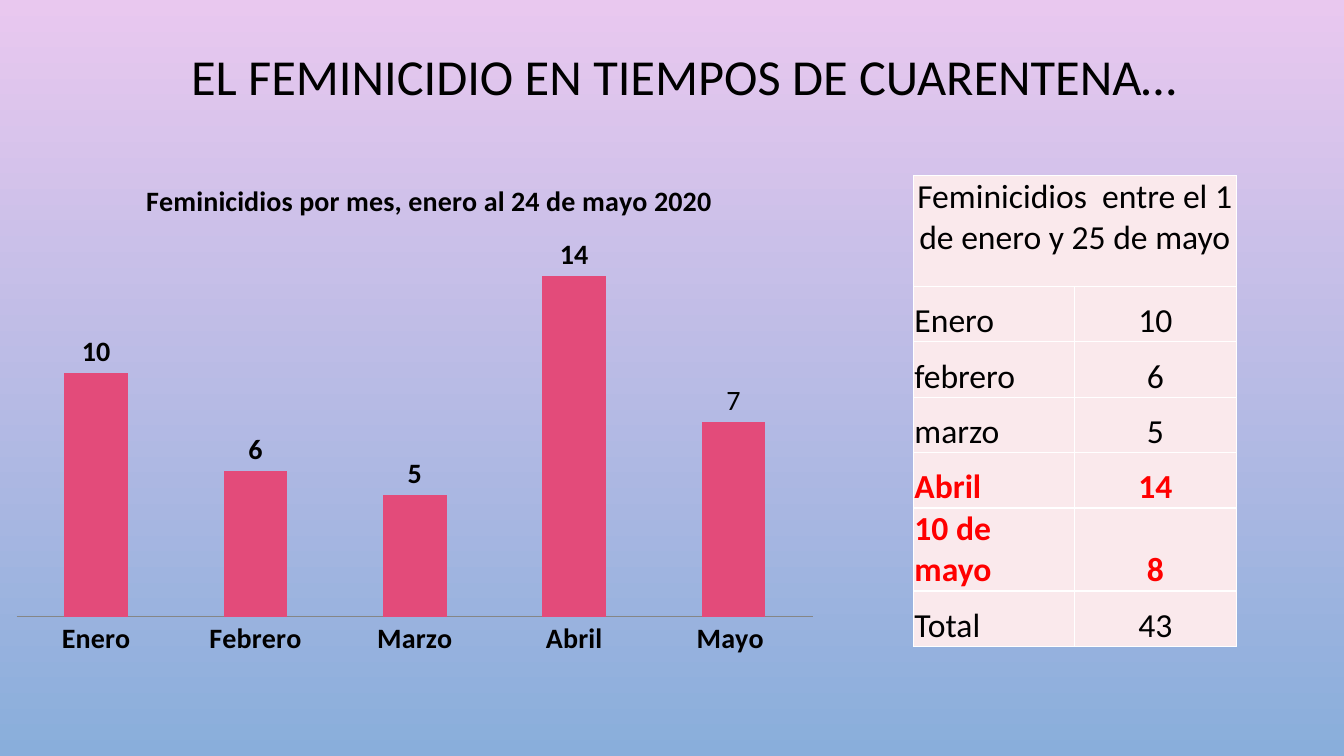
import pptx
import pptx.util
import pptx.chart.data
import pptx.dml.color
import pptx.enum.chart
import pptx.enum.text
import pptx.oxml
import pptx.oxml.ns
from dataclasses import dataclass

Inches, Pt = pptx.util.Inches, pptx.util.Pt
RGB = pptx.dml.color.RGBColor.from_string
qn = pptx.oxml.ns.qn
ALIGN = pptx.enum.text.PP_ALIGN
ANCHOR = pptx.enum.text.MSO_ANCHOR


@dataclass(frozen=True)
class Theme:
    font: str = "Calibri"
    text: str = "000000"
    alert: str = "FF0000"
    bar: str = "E34B7A"
    axis: str = "868686"
    cell: str = "FAE9EC"
    border: str = "FFFFFF"
    bg: tuple = ("E9C8EF", "89AEDB")
    title_size: int = 36
    chart_size: int = 20
    table_size: int = 24


T = Theme()

MONTHS = ["Enero", "Febrero", "Marzo", "Abril", "Mayo "]
COUNTS = [10, 6, 5, 14, 8]
TABLE_HEAD = "Feminicidios  entre el 1 de enero y 25 de mayo"
# label, value, highlighted
TABLE_ROWS = [
    ("Enero", "10", False),
    ("febrero", "6", False),
    ("marzo", "5", False),
    ("Abril", "14", True),
    ("10 de mayo", "8", True),
    ("Total", "43", False),
]


def set_attrs(obj, values):
    for name, value in values.items():
        setattr(obj, name, value)


def style_font(font, size, bold=False, color=T.text):
    set_attrs(font, {"name": T.font, "size": Pt(size), "bold": bold})
    font.color.rgb = RGB(color)


def set_layout(parent, index, **fractions):
    """Place a chart part by fractions of the chart's box."""
    old = parent.find(qn("c:layout"))
    if old is not None:
        parent.remove(old)
    target = '<c:layoutTarget val="inner"/>' if "w" in fractions else ""
    modes = "".join(f'<c:{k}Mode val="edge"/>' for k in ("x", "y"))
    values = "".join(f'<c:{k} val="{v}"/>' for k, v in fractions.items())
    parent.insert(index, pptx.oxml.parse_xml(
        f'<c:layout {pptx.oxml.ns.nsdecls("c")}><c:manualLayout>'
        f"{target}{modes}{values}</c:manualLayout></c:layout>"))


def add_background(s):
    fill = s.background.fill
    fill.gradient()
    fill.gradient_angle = 270
    for stop, color, pos in zip(fill.gradient_stops, T.bg, (0, 1)):
        stop.color.rgb = RGB(color)
        stop.position = pos


def add_title(s, x, y, w, h):
    sp = s.shapes.title
    set_attrs(sp, {"left": Inches(x), "top": Inches(y),
                   "width": Inches(w), "height": Inches(h)})
    tf = sp.text_frame
    tf.vertical_anchor = ANCHOR.MIDDLE
    p = tf.paragraphs[0]
    set_attrs(p, {"alignment": ALIGN.CENTER, "line_spacing": 0.9})
    r = p.add_run()
    r.text = "EL FEMINICIDIO EN TIEMPOS DE CUARENTENA…"
    style_font(r.font, T.title_size)


def add_month_chart(s, x, y, w, h):
    data = pptx.chart.data.CategoryChartData()
    data.categories = MONTHS
    data.add_series("Feminicidios", COUNTS)
    chart = s.shapes.add_chart(
        pptx.enum.chart.XL_CHART_TYPE.COLUMN_CLUSTERED,
        Inches(x), Inches(y), Inches(w), Inches(h), data).chart
    style_font(chart.font, T.chart_size)
    chart.has_legend = False

    # Title
    chart.has_title = True
    r = chart.chart_title.text_frame.paragraphs[0].add_run()
    r.text = "Feminicidios por mes, enero al 24 de mayo 2020"
    style_font(r.font, T.chart_size, bold=True)
    chart.chart_title.include_in_layout = False
    plot_area = chart._chartSpace.chart.plotArea
    set_layout(chart._chartSpace.chart.find(qn("c:title")), 1, x=0.17, y=0.04)
    set_layout(plot_area, 0, x=0.02, y=0.14, w=0.96, h=0.76)

    # Axes
    no_tick = pptx.enum.chart.XL_TICK_MARK.NONE
    set_attrs(chart.value_axis, {
        "visible": False, "has_major_gridlines": False,
        "minimum_scale": 0, "maximum_scale": 16})
    set_attrs(chart.category_axis, {
        "major_tick_mark": no_tick, "minor_tick_mark": no_tick})
    style_font(chart.category_axis.tick_labels.font, T.chart_size, bold=True)
    line = chart.category_axis.format.line
    line.color.rgb = RGB(T.axis)
    line.width = Pt(0.75)

    # Bars and value labels
    plot = chart.plots[0]
    set_attrs(plot, {"gap_width": 150, "vary_by_categories": False})
    series = plot.series[0]
    series.format.fill.solid()
    series.format.fill.fore_color.rgb = RGB(T.bar)
    outside = pptx.enum.chart.XL_LABEL_POSITION.OUTSIDE_END
    labels = series.data_labels
    set_attrs(labels, {"show_value": True, "position": outside})
    style_font(labels.font, T.chart_size, bold=True)
    may = series.points[len(MONTHS) - 1].data_label
    r = may.text_frame.paragraphs[0].add_run()
    r.text = "7"
    style_font(r.font, T.chart_size)
    may.position = outside


def fill_cell(cell, text, align, anchor, alert=False):
    set_attrs(cell, {
        "margin_left": Inches(0.01), "margin_right": Inches(0.01),
        "margin_top": Inches(0.01), "margin_bottom": 0,
        "vertical_anchor": anchor})
    tc_pr = cell._tc.get_or_add_tcPr()
    for side in ("lnL", "lnR", "lnT", "lnB"):
        tc_pr.append(pptx.oxml.parse_xml(
            f'<a:{side} {pptx.oxml.ns.nsdecls("a")} w="{Pt(1)}"><a:solidFill>'
            f'<a:srgbClr val="{T.border}"/></a:solidFill></a:{side}>'))
    cell.fill.solid()
    cell.fill.fore_color.rgb = RGB(T.cell)
    p = cell.text_frame.paragraphs[0]
    p.alignment = align
    if text:
        r = p.add_run()
        r.text = text
        style_font(r.font, T.table_size, alert, T.alert if alert else T.text)


def add_count_table(s, x, y, w, row_h):
    n = len(TABLE_ROWS)
    table = s.shapes.add_table(n + 1, 2, Inches(x), Inches(y), Inches(w),
                               Inches(row_h * (n + 2))).table
    for col in table.columns:
        col.width = Inches(w / 2)
    for i, row in enumerate(table.rows):
        row.height = Inches(row_h if i else 2 * row_h)

    # Header across both columns
    table.cell(0, 0).merge(table.cell(0, 1))
    for col, text in enumerate((TABLE_HEAD, "")):
        fill_cell(table.cell(0, col), text, ALIGN.CENTER, ANCHOR.TOP)

    # One row per month, then the total
    for i, (label, value, alert) in enumerate(TABLE_ROWS, 1):
        fill_cell(table.cell(i, 0), label, ALIGN.LEFT, ANCHOR.BOTTOM, alert)
        fill_cell(table.cell(i, 1), value, ALIGN.CENTER, ANCHOR.BOTTOM, alert)


def main():
    prs = pptx.Presentation()
    set_attrs(prs, {"slide_width": Inches(13.33), "slide_height": Inches(7.5)})
    s = prs.slides.add_slide(prs.slide_layouts[5])
    add_background(s)
    add_title(s, 1.12, 0.23, 11.33, 1.11)
    add_month_chart(s, 0, 1.54, 8.23, 5.09)
    add_count_table(s, 9.06, 1.74, 3.2, 0.55)
    prs.save("out.pptx")


if __name__ == "__main__":
    main()
